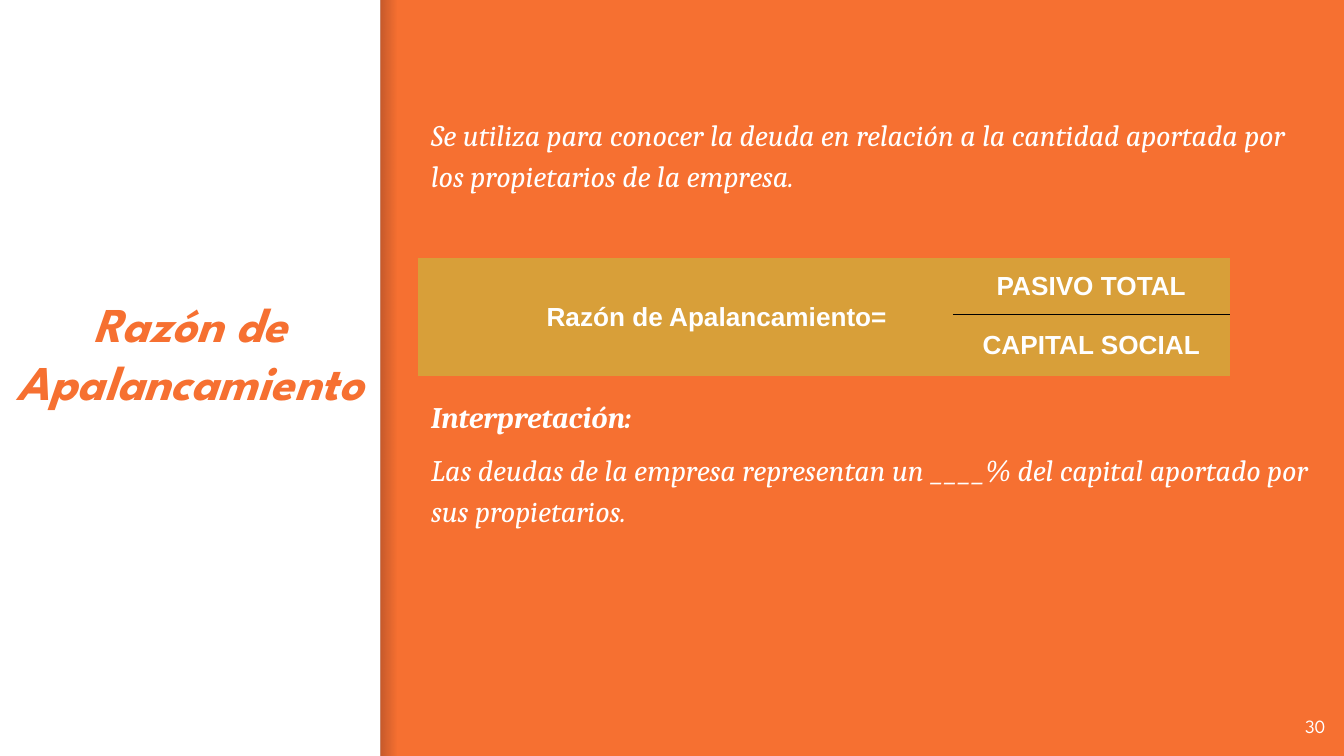
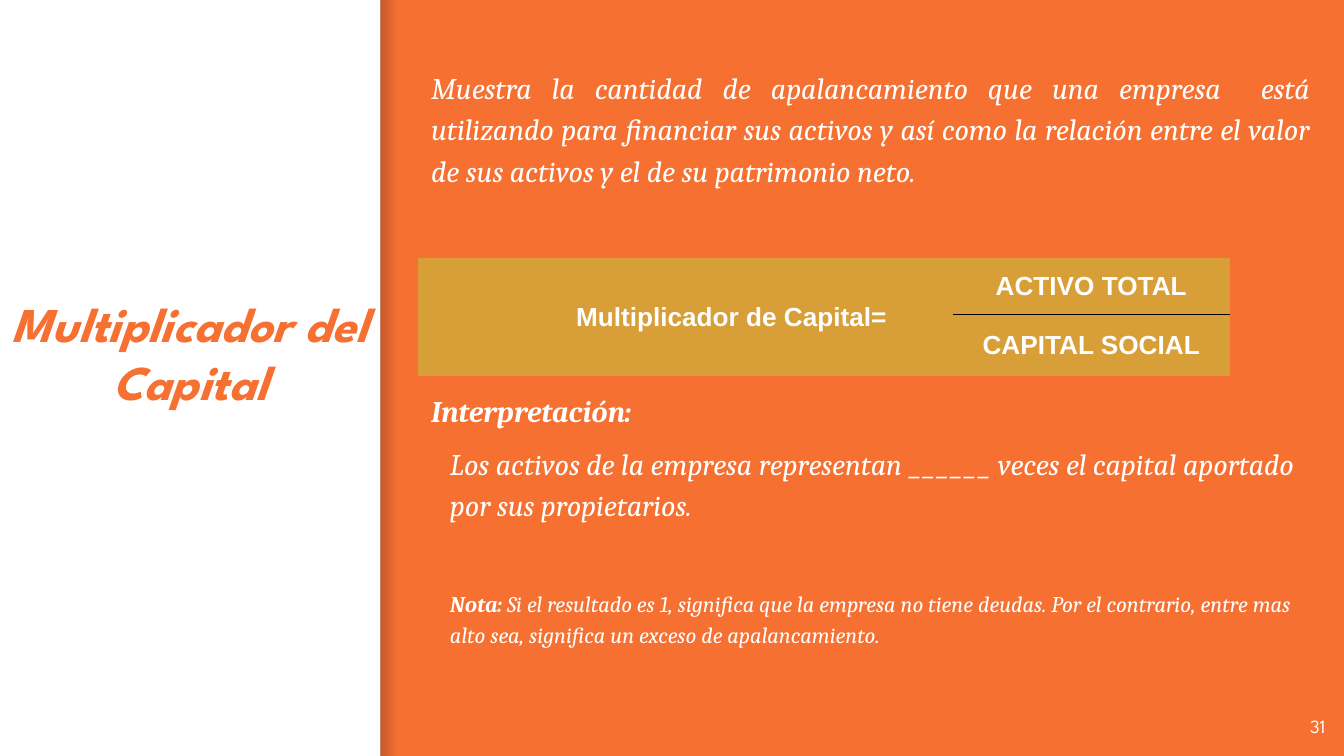
from pptx import Presentation
from pptx.dml.color import RGBColor as Rgb
from pptx.enum.shapes import MSO_SHAPE as Shape
from pptx.enum.text import MSO_ANCHOR as Anchor, PP_ALIGN as Align
from pptx.oxml.ns import qn
from pptx.util import Inches, Pt
from lxml.etree import SubElement as Sub

WIDE, HIGH = Inches(10), Inches(5.625)
INK = {"back": "F67031", "white": "FFFFFF", "gold": "D89F39",
       "shade": "000014", "rule": "000000"}
HEAD, BODY, CELL = "League Spartan", "Cambria", "Arial"
PLAIN = "{2D5ABB26-0587-4C30-8999-92F81FD0307C}"  # table style without grid

SLIDES = [
    dict(title="Razón de Apalancamiento", num="30", drop=0.35, align=Align.LEFT,
         intro="Se utiliza para conocer la deuda en relación a la cantidad "
               "aportada por los propietarios de la empresa.",
         ratio="Razón de Apalancamiento=", top="PASIVO TOTAL", base="CAPITAL SOCIAL",
         sense="Las deudas de la empresa representan un ____% del capital "
               "aportado por sus propietarios.",
         indent=0, note=None),
    dict(title="Multiplicador del Capital", num="31", drop=0, align=Align.JUSTIFY,
         intro="Muestra la cantidad de apalancamiento que una empresa  está "
               "utilizando para financiar sus activos y así como la relación "
               "entre el valor de sus activos y el de su patrimonio neto.",
         ratio="Multiplicador de Capital=", top="ACTIVO TOTAL", base="CAPITAL SOCIAL",
         sense="Los activos de la empresa representan ______ veces el capital "
               "aportado por sus propietarios.",
         indent=0.14,
         note=("Nota: ", "Si el resultado es 1, significa que la empresa no tiene "
               "deudas. Por el contrario, entre mas alto sea, significa un exceso "
               "de apalancamiento.")),
]


def tint(name):
    return Rgb.from_string(INK[name])


def area(x, y, w, h):
    """Turn percentages of the slide into lengths."""
    return [int(WIDE * x / 100), int(HIGH * y / 100),
            int(WIDE * w / 100), int(HIGH * h / 100)]


def style(font, face, size, color, bold=False, italic=False):
    font.name, font.size = face, Pt(size)
    font.bold, font.italic = bold, italic
    font.color.rgb = tint(color)


def band(slide, x, w):
    """Add a full-height strip without outline."""
    strip = slide.shapes.add_shape(Shape.RECTANGLE, *area(x, 0, w, 100))
    strip.shadow.inherit = False
    strip.line.fill.background()
    return strip


def panel(slide):
    side = band(slide, -0.1, 28.4)
    side.fill.solid()
    side.fill.fore_color.rgb = tint("white")
    edge = band(slide, 28.3, 1.2)
    edge.fill.gradient()
    edge.fill.gradient_angle = 0
    for stop, place, alpha in zip(edge.fill.gradient_stops, (0, 1), (20000, 0)):
        stop.position = place
        stop.color.rgb = tint("shade")
    for hue, alpha in zip(edge._element.spPr.iter(qn("a:srgbClr")), (20000, 0)):
        Sub(hue, qn("a:alpha"), val=str(alpha))


def frame(slide, spot, anchor=Anchor.TOP, drop=0):
    text = slide.shapes.add_textbox(*area(*spot)).text_frame
    text.word_wrap = True
    text.vertical_anchor = anchor
    text.margin_left = text.margin_right = text.margin_bottom = Inches(0.1)
    text.margin_top = Inches(0.1 + drop)
    return text


def label(slide, spot, words, anchor, align, size, **look):
    line = frame(slide, spot, anchor).paragraphs[0]
    line.text, line.alignment = words, align
    style(line.font, HEAD, size, **look)


def para(line, words, gap=6, size=16, bold=False, align=Align.LEFT, indent=0):
    line.text, line.alignment = words, align
    line.line_spacing, line.space_before = 1.15, Pt(gap)
    style(line.font, BODY, size, "white", bold, True)
    if indent:
        props = line._p.get_or_add_pPr()
        props.set("marL", str(Inches(indent)))
        props.set("indent", "0")


def prose(slide, item):
    text = frame(slide, (31.1, 6.76, 67.4, 80), drop=item["drop"])
    para(text.paragraphs[0], item["intro"], align=item["align"])
    para(text.add_paragraph(), "Interpretación:", gap=107, bold=True)
    para(text.add_paragraph(), item["sense"], indent=item["indent"])
    if item["note"]:
        lead, rest = item["note"]
        line = text.add_paragraph()
        para(line, lead, gap=34, size=12, indent=item["indent"])
        line.runs[0].font.bold = True
        line.add_run().text = rest


def fill(cell, words, align):
    cell.fill.solid()
    cell.fill.fore_color.rgb = tint("gold")
    cell.vertical_anchor = Anchor.MIDDLE
    line = cell.text_frame.paragraphs[0]
    line.text, line.alignment = words, align
    style(line.font, CELL, 14, "white", bold=True)


def rule(cell, side):
    """Draw one border of a cell; borders precede its fill."""
    props = cell._tc.get_or_add_tcPr()
    edge = Sub(props, qn("a:" + side), w=str(Pt(1)))
    Sub(Sub(edge, qn("a:solidFill")), qn("a:srgbClr"), val=INK["rule"])
    props.insert(0, edge)


def ratio(slide, item):
    table = slide.shapes.add_table(2, 2, *area(31.1, 34.13, 60.4, 15.65)).table
    table.first_row = table.horz_banding = False
    table._tbl.tblPr.find(qn("a:tableStyleId")).text = PLAIN
    for col, share in zip(table.columns, (39.8, 20.6)):
        col.width = int(WIDE * share / 100)
    for row, share in zip(table.rows, (7.47, 8.18)):
        row.height = int(HIGH * share / 100)
    name = table.cell(0, 0)
    name.merge(table.cell(1, 0))
    fill(name, item["ratio"], Align.RIGHT)
    name.margin_right = Inches(0.49)
    for row, (key, side) in enumerate((("top", "lnB"), ("base", "lnT"))):
        cell = table.cell(row, 1)
        fill(cell, item[key], Align.CENTER)
        rule(cell, side)


def build(deck, item):
    slide = deck.slides.add_slide(deck.slide_layouts[6])
    slide.background.fill.solid()
    slide.background.fill.fore_color.rgb = tint("back")
    panel(slide)
    label(slide, (-0.6, 37.33, 29.5, 18.67), item["title"], Anchor.BOTTOM,
          Align.CENTER, 26, color="back", bold=True, italic=True)
    label(slide, (93.6, 92.27, 6, 7.64), item["num"], Anchor.MIDDLE,
          Align.RIGHT, 10, color="white")
    prose(slide, item)
    ratio(slide, item)


def main():
    deck = Presentation()
    deck.slide_width, deck.slide_height = WIDE, HIGH
    for item in SLIDES:
        build(deck, item)
    deck.save("out.pptx")


if __name__ == "__main__":
    main()
